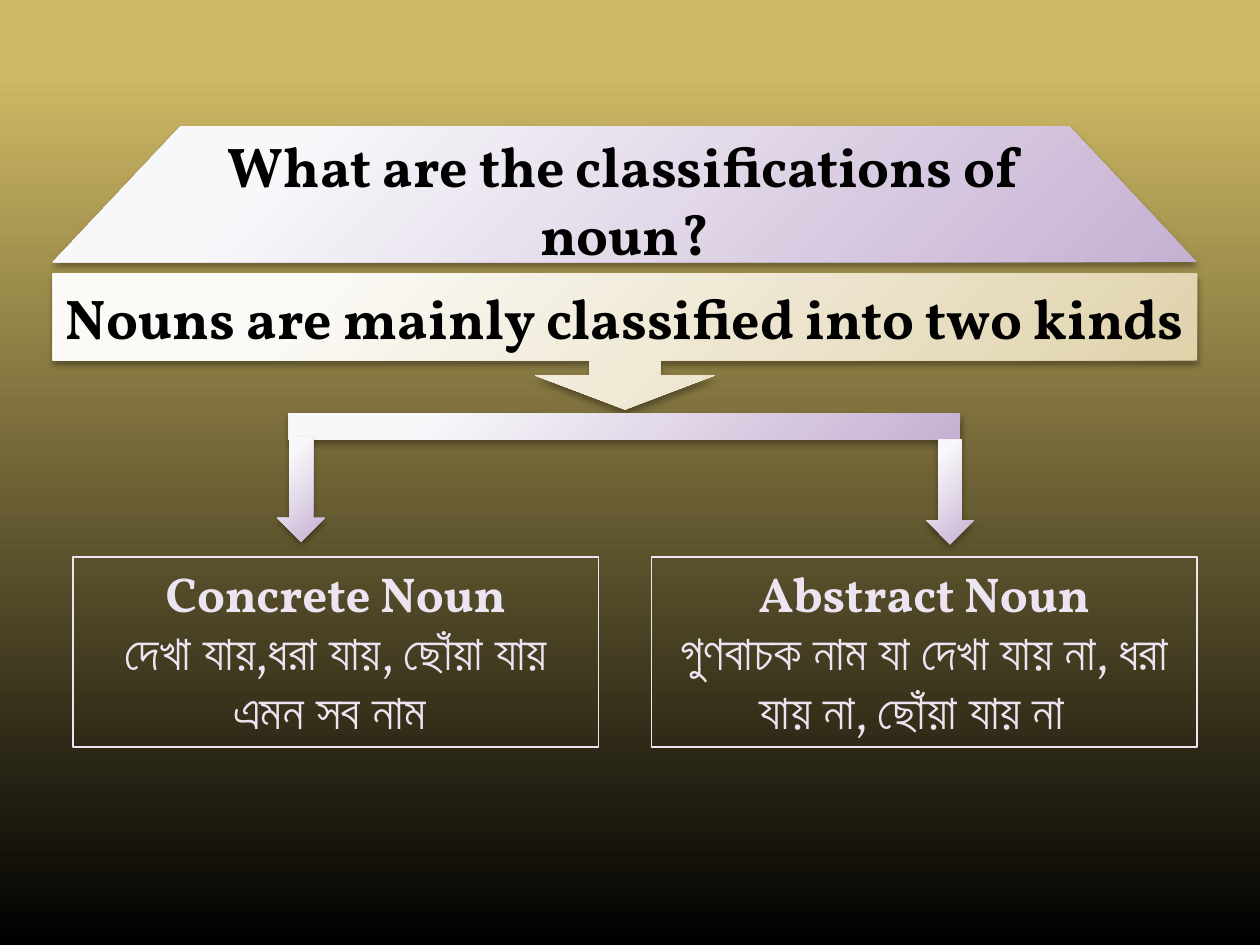
from lxml.etree import SubElement
from pptx import Presentation
from pptx.dml.color import RGBColor
from pptx.enum.shapes import MSO_SHAPE
from pptx.enum.text import MSO_ANCHOR, MSO_AUTO_SIZE, PP_ALIGN
from pptx.oxml.ns import qn
from pptx.util import Inches, Pt

GOLD = RGBColor(0xCD, 0xB8, 0x64)
BLACK = RGBColor(0, 0, 0)
LILAC = (RGBColor(0xF8, 0xF7, 0xFA), RGBColor(0xC5, 0xB0, 0xD2))
CREAM = (RGBColor(0xFB, 0xFA, 0xF6), RGBColor(0xDE, 0xD1, 0xA8))
PALE = RGBColor(0xED, 0xE4, 0xF1)

HEAD = {"name": "Vollkorn", "size": Pt(32), "bold": True}
TERM = {"name": "Vollkorn", "size": Pt(28), "bold": True}
BODY = {**TERM, "bold": False}

LEFT, WIDTH = 0.42, 9.08
KINDS = [
    (0.58, 4.17, "Concrete Noun", "দেখা যায়,ধরা যায়, ছোঁয়া যায় এমন সব নাম "),
    (5.17, 4.33, "Abstract Noun", "গুণবাচক নাম যা দেখা যায় না, ধরা যায় না, ছোঁয়া যায় না  "),
]


def join_dots(text):
    """Use the single Bengali letter yya instead of ya with a nukta."""
    return text.replace(chr(0x09AF) + chr(0x09BC), chr(0x09DF))


def blend(fill, colors, start):
    """Fill from top to bottom, the first colour held until start."""
    fill.gradient()
    fill.gradient_angle = 270
    for stop, color, pos in zip(fill.gradient_stops, colors, (start, 1)):
        stop.color.rgb = color
        stop.position = pos


def glow(shape):
    """Turn the gradient into a circle around the top left corner."""
    grad = shape._element.spPr.find(qn("a:gradFill"))
    grad.remove(grad.find(qn("a:lin")))
    ring = SubElement(grad, qn("a:path"), path="circle")
    SubElement(ring, qn("a:fillToRect"),
               l="-15000", t="-15000", r="115000", b="115000")


def shade(shape):
    shape.shadow.inherit = False
    effects = shape._element.spPr.find(qn("a:effectLst"))
    drop = SubElement(effects, qn("a:outerShdw"), blurRad=str(Pt(3.5)),
                      dist=str(Pt(2.2)), dir="5400000", rotWithShape="0")
    tint = SubElement(drop, qn("a:srgbClr"), val=str(BLACK))
    SubElement(tint, qn("a:alpha"), val="32000")


def add_block(shapes, kind, box, colors, adjust=()):
    shape = shapes.add_shape(kind, *map(Inches, box))
    for i, value in enumerate(adjust):
        shape.adjustments[i] = value
    blend(shape.fill, colors, 0.2)
    glow(shape)
    shape.line.fill.background()
    shade(shape)
    return shape


def write(frame, lines, color):
    """Set one centred paragraph for each (text, format) pair."""
    frame.word_wrap = True
    for i, (text, style) in enumerate(lines):
        para = frame.add_paragraph() if i else frame.paragraphs[0]
        para.alignment = PP_ALIGN.CENTER
        run = para.add_run()
        run.text = text
        for key, value in style.items():
            setattr(run.font, key, value)
        run.font.color.rgb = color


def add_banner(shapes, kind, top, colors, adjust, text):
    box = (LEFT, top, WIDTH, 1.08)
    shape = add_block(shapes, kind, box, colors, adjust)
    shape.text_frame.vertical_anchor = MSO_ANCHOR.MIDDLE
    write(shape.text_frame, [(text, HEAD)], BLACK)


def add_fork(shapes):
    parts = shapes.add_group_shape().shapes
    add_block(parts, MSO_SHAPE.RECTANGLE, (2.29, 3.28, 5.33, 0.21), LILAC)
    for left, top in ((2.2, 3.47), (7.35, 3.49)):
        add_block(parts, MSO_SHAPE.DOWN_ARROW, (left, top, 0.38, 0.83), LILAC)


def add_card(shapes, left, width, term, note):
    box = shapes.add_textbox(*map(Inches, (left, 4.42, width, 1.51)))
    box.line.color.rgb = PALE
    box.line.width = Pt(0.75)
    write(box.text_frame, [(term, TERM), (join_dots(note), BODY)], PALE)
    box.text_frame.auto_size = MSO_AUTO_SIZE.SHAPE_TO_FIT_TEXT


def main():
    deck = Presentation()
    deck.slide_width, deck.slide_height = Inches(10), Inches(7.5)
    slide = deck.slides.add_slide(deck.slide_layouts[6])
    blend(slide.background.fill, (GOLD, BLACK), 0.08)
    shapes = slide.shapes
    add_banner(shapes, MSO_SHAPE.TRAPEZOID, 1, LILAC, [0.94],
               "What are the classifications of noun?")
    add_banner(shapes, MSO_SHAPE.DOWN_ARROW_CALLOUT, 2.17, CREAM,
               [0.52, 0.66, 0.25, 0.64],
               "Nouns are mainly classified into two kinds")
    add_fork(shapes)
    for kind in KINDS:
        add_card(shapes, *kind)
    deck.save("out.pptx")


if __name__ == "__main__":
    main()
